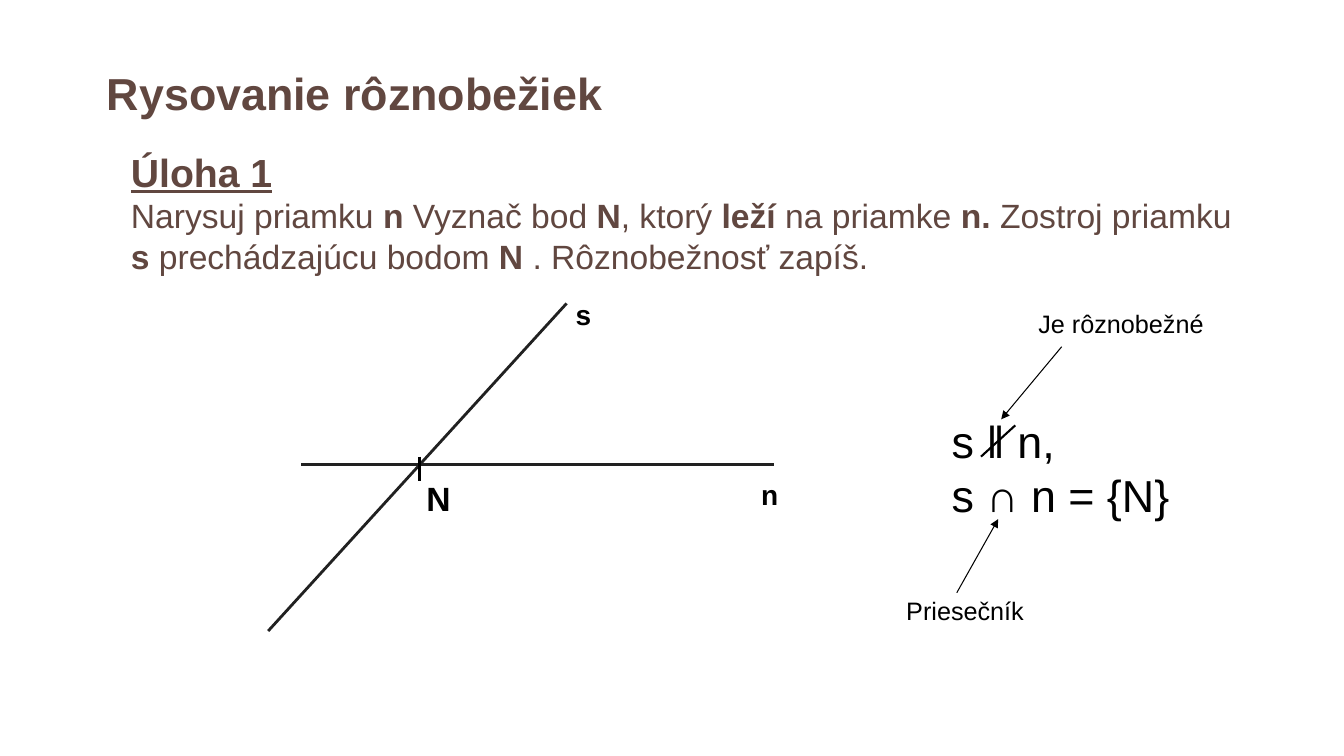
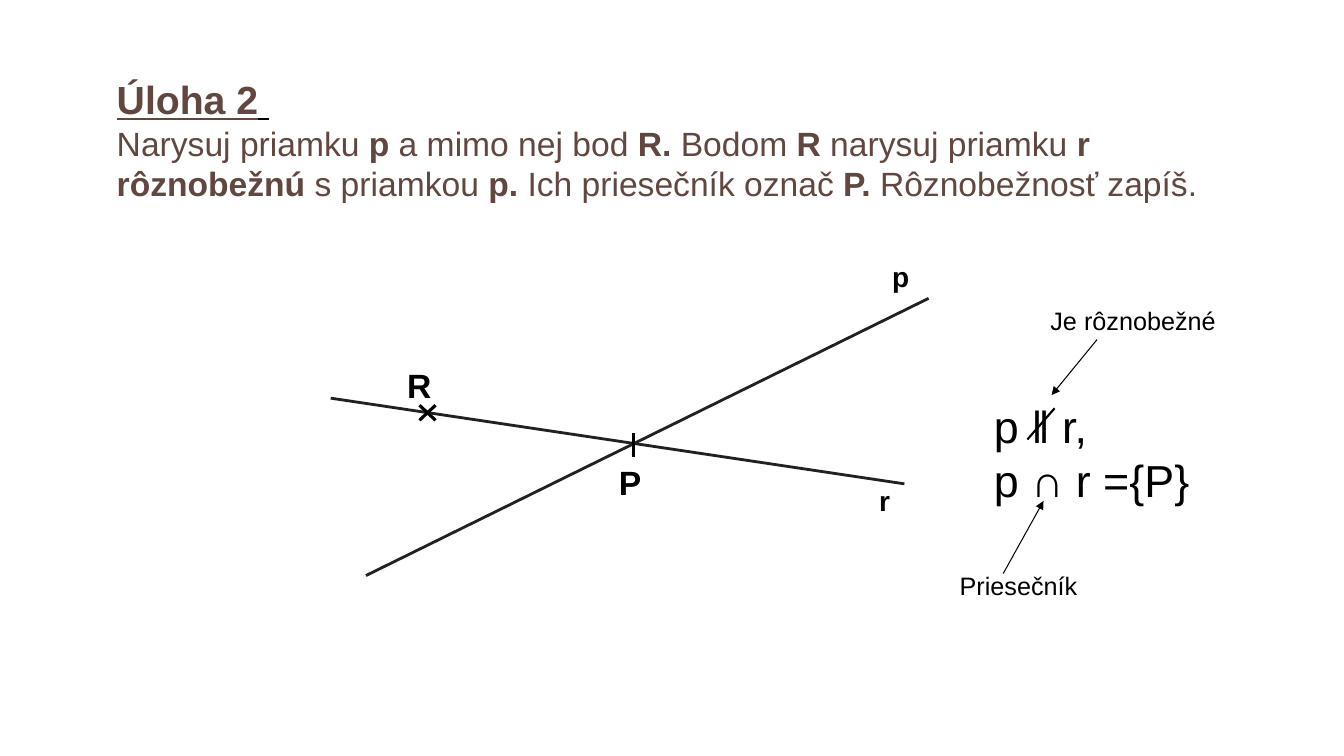
import pptx
import pptx.util
import pptx.dml.color
import pptx.enum.shapes
import pptx.enum.text
import pptx.oxml
import pptx.oxml.ns

Inches = pptx.util.Inches
FONT = "Arial"
INK = {"brown": "614740", "line": "212121", "black": "000000"}
TITLE_ONLY, BLANK = 5, 6


def color(name):
    return pptx.dml.color.RGBColor.from_string(INK[name])


def style(para, size, ink="black", bold=None):
    font = para.font
    font.name = FONT
    font.size = pptx.util.Pt(size)
    font.bold = bold
    font.color.rgb = color(ink)
    para.alignment = pptx.enum.text.PP_ALIGN.LEFT


def add_text(slide, box, lines, size, bold=None, wrap=True):
    shape = slide.shapes.add_textbox(*map(Inches, box))
    frame = shape.text_frame
    frame.word_wrap = wrap
    frame.text = "\n".join(lines)
    for para in frame.paragraphs:
        style(para, size, bold=bold)
    return frame


def add_title(slide, box, text):
    title = slide.shapes.title
    title.left, title.top, title.width, title.height = map(Inches, box)
    frame = title.text_frame
    frame.text = text
    frame.auto_size = pptx.enum.text.MSO_AUTO_SIZE.NONE
    frame.vertical_anchor = pptx.enum.text.MSO_ANCHOR.TOP
    style(frame.paragraphs[0], 32, "brown", True)


def add_task(slide, box, head, text, tail=""):
    frame = add_text(slide, box, [head], 28)
    top = frame.paragraphs[0]
    style(top, 28, "brown", True)
    top.font.underline = True
    if tail:
        run = top.add_run()
        run.text = tail
        run.font.color.rgb = color("black")
    body = frame.add_paragraph()
    style(body, 24, "brown")
    for i, part in enumerate(text.split("*")):
        run = body.add_run()
        run.text = part
        run.font.bold = i % 2 == 1


def add_line(slide, start, end, width, ink="black", arrow=False):
    kind = pptx.enum.shapes.MSO_CONNECTOR.STRAIGHT
    line = slide.shapes.add_connector(kind, *map(Inches, start + end))
    line.line.width = pptx.util.Pt(width)
    line.line.color.rgb = color(ink)
    props = line._element.spPr
    if arrow:
        tip = pptx.oxml.parse_xml(
            '<a:tailEnd %s type="triangle"/>' % pptx.oxml.ns.nsdecls("a"))
        line.line._get_or_add_ln().append(tip)
    props.append(pptx.oxml.parse_xml(
        "<a:effectLst %s/>" % pptx.oxml.ns.nsdecls("a")))


def add_ray(slide, start, end, name, spot):
    add_line(slide, start, end, 2, "line")
    add_text(slide, spot + (0.47, 0.44), [name], 20, True)


def add_point(slide, name, spot, marks):
    for start, end in marks:
        add_line(slide, start, end, 2.25)
    add_text(slide, spot + (0.45, 0.5), [name], 24, True, False)


def add_note(slide, text, spot, start, end):
    add_text(slide, spot + (2.03, 0.4), [text], 18)
    add_line(slide, start, end, 0.75, arrow=True)


def add_proof(slide, box, lines, slash, upper, lower):
    add_text(slide, box, lines, 32)
    add_line(slide, *slash, 1.5)
    add_note(slide, "Je rôznobežné", *upper)
    add_note(slide, "Priesečník", *lower)


def first(deck):
    slide = deck.slides.add_slide(deck.slide_layouts[TITLE_ONLY])
    add_title(slide, (0.96, 0.6, 5.18, 0.64), "Rysovanie rôznobežiek")
    add_task(slide, (1.2, 1.42, 11.24, 1.38), "Úloha 1",
             "Narysuj priamku *n* Vyznač bod *N*, ktorý *leží* na priamke "
             "*n. *Zostroj priamku *s* prechádzajúcu bodom *N* . "
             "Rôznobežnosť zapíš.")
    add_ray(slide, (2.99, 4.61), (7.68, 4.61), "n", (7.45, 4.69))
    add_ray(slide, (2.66, 6.26), (5.62, 3.01), "s", (5.61, 2.9))
    add_point(slide, "N", (4.13, 4.69), [((4.16, 4.53), (4.16, 4.77))])
    add_proof(slide, (9.34, 4.06, 3.27, 1.18), ["s ǁ n,", "s ∩ n = {N}"],
              ((10.07, 4.22), (9.73, 4.53)),
              ((10.2, 3.01), (10.53, 3.44), (9.93, 4.16)),
              ((8.89, 5.86), (9.49, 5.88), (9.9, 5.15)))


def second(deck):
    slide = deck.slides.add_slide(deck.slide_layouts[BLANK])
    add_task(slide, (1.06, 0.7, 11.37, 1.38), "Úloha 2",
             "Narysuj priamku *p *a mimo nej bod *R. *Bodom *R* narysuj "
             "priamku *r rôznobežnú* s priamkou *p. *Ich priesečník označ "
             "*P. *Rôznobežnosť zapíš.", " ")
    add_ray(slide, (3.63, 5.71), (9.21, 2.96), "p", (8.75, 2.53))
    add_ray(slide, (3.28, 3.95), (8.97, 4.8), "r", (8.62, 4.75))
    add_point(slide, "R", (3.94, 3.57), [((4.16, 4.02), (4.32, 4.17)),
                                         ((4.32, 4.02), (4.16, 4.17))])
    add_point(slide, "P", (6.04, 4.53), [((6.28, 4.3), (6.28, 4.53))])
    add_proof(slide, (9.76, 3.91, 2.73, 1.18), ["p ǁ r,", "p ∩ r ={P}"],
              ((10.46, 4.05), (10.19, 4.36)),
              ((10.32, 2.98), (10.88, 3.37), (10.43, 3.92)),
              ((9.42, 5.61), (9.95, 5.69), (10.35, 4.97)))


def main():
    deck = pptx.Presentation()
    deck.slide_width = Inches(13.33)
    deck.slide_height = Inches(7.5)
    first(deck)
    second(deck)
    deck.save("out.pptx")


if __name__ == "__main__":
    main()
